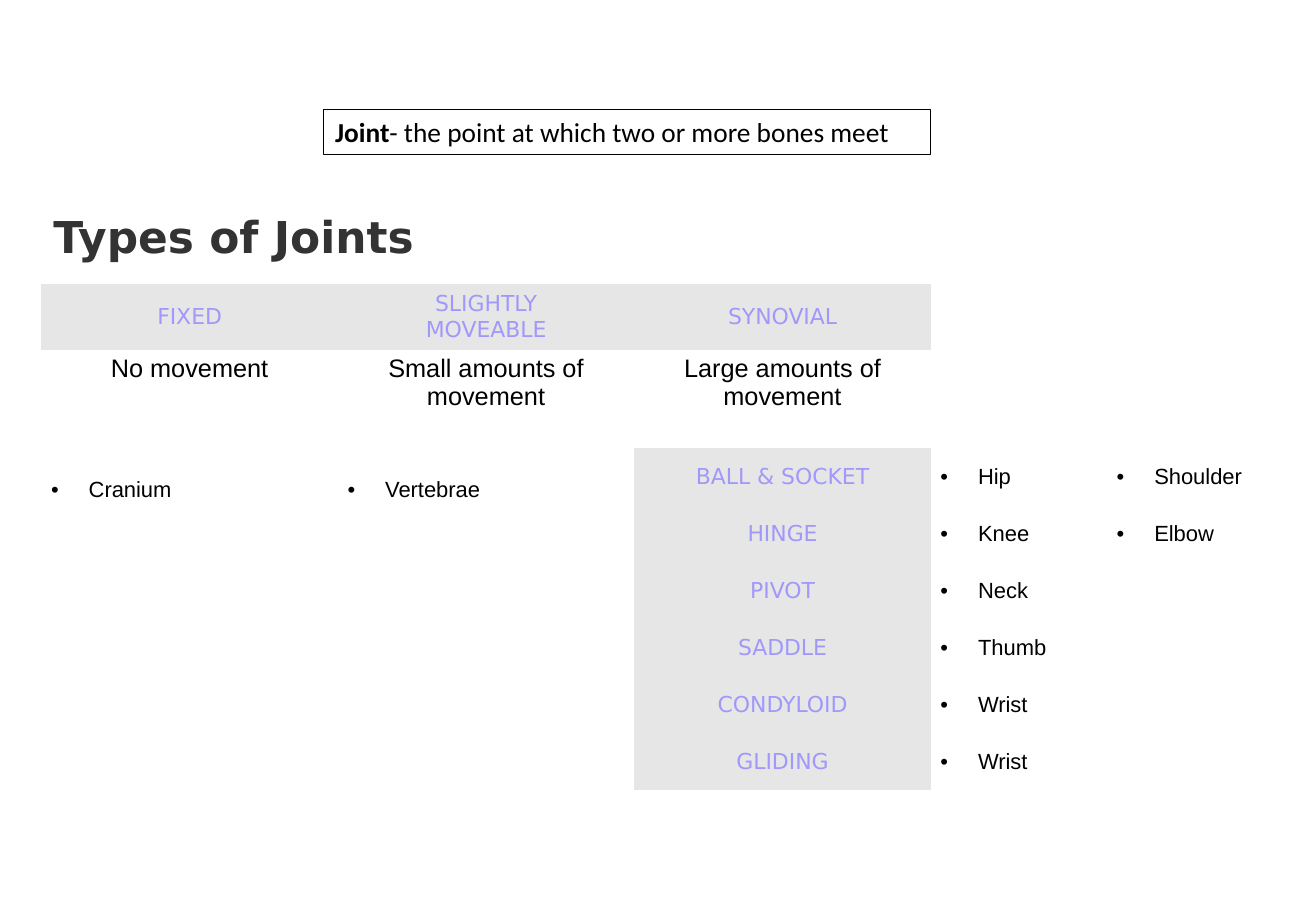
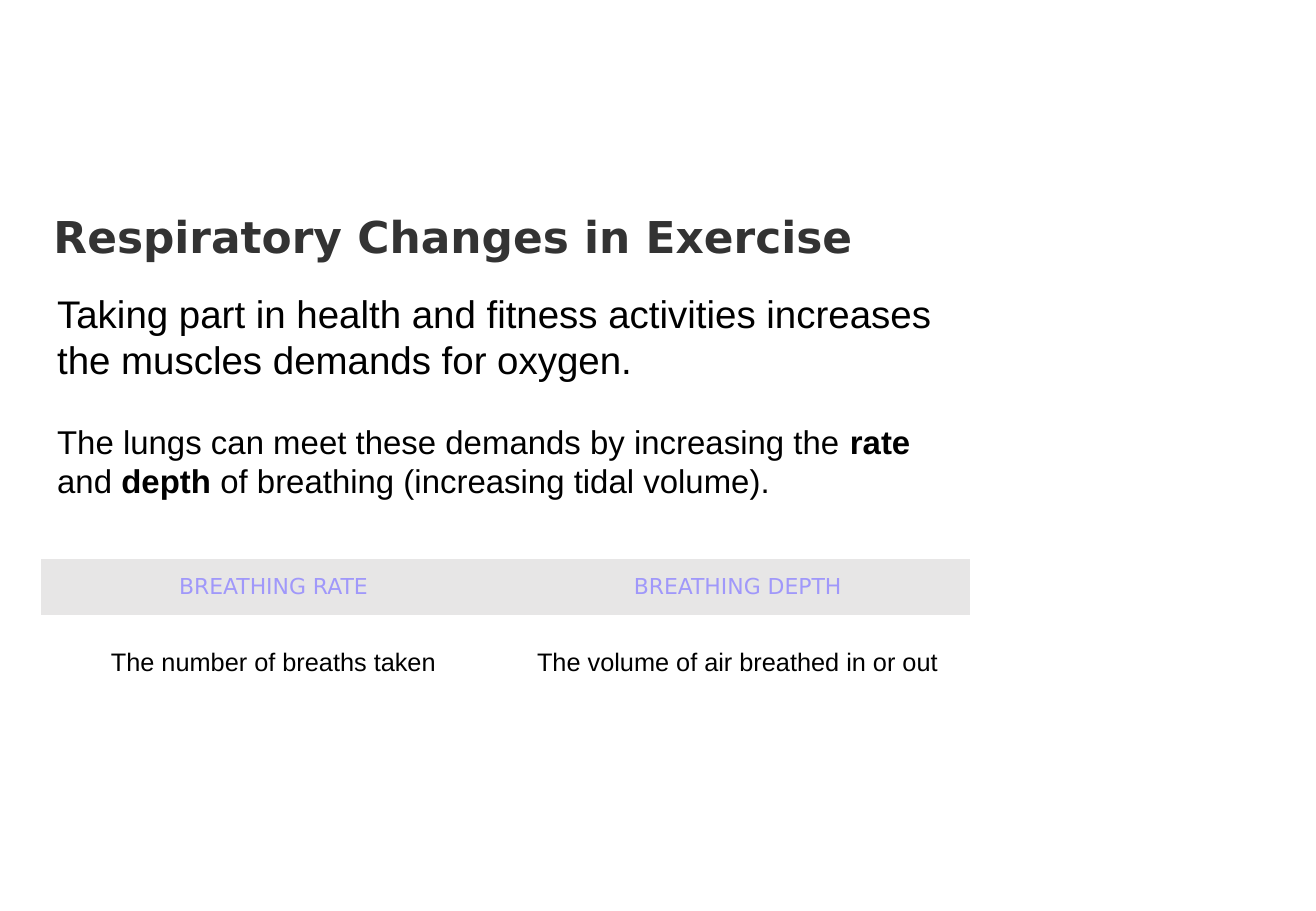
import pptx
import pptx.dml.color
import pptx.enum.text
import pptx.oxml
import pptx.oxml.ns
import pptx.util

Inches = pptx.util.Inches
Pt = pptx.util.Pt
ALIGN = pptx.enum.text.PP_ALIGN
ANCHOR = pptx.enum.text.MSO_ANCHOR

COLOURS = {"title": "333333", "text": "000000", "label": "A098FA", "band": "E7E6E6"}
LOOKS = {
    "title": {"name": "DejaVu Sans", "size": Pt(26), "bold": True},
    "label": {"name": "DejaVu Sans", "size": Pt(13)},
    "definition": {"name": "Calibri", "size": Pt(16.2)},
    "lead": {"name": "Arial", "size": Pt(22.8)},
    "detail": {"name": "Arial", "size": Pt(19.5)},
    "summary": {"name": "Arial", "size": Pt(15)},
    "example": {"name": "Arial", "size": Pt(13)},
}
NO_STYLE = "{2D5ABB26-0587-4C30-8999-92F81FD0307C}"
NAMESPACE = pptx.oxml.ns.nsdecls("a")
LEFT = 0.34


def write(paragraph, pieces, look, align=ALIGN.LEFT):
    paragraph.alignment = align
    for text, bold in pieces:
        run = paragraph.add_run()
        run.text = text
        for attribute, value in {"bold": bold, **LOOKS[look]}.items():
            setattr(run.font, attribute, value)
        colour = COLOURS.get(look, COLOURS["text"])
        run.font.color.rgb = pptx.dml.color.RGBColor.from_string(colour)


def fill_table(slide, top, widths, heights, entries, spans):
    table = slide.shapes.add_table(
        len(heights), len(widths), Inches(LEFT), Inches(top),
        Inches(sum(widths)), Inches(sum(heights))).table
    table.first_row = table.horz_banding = False
    table._tbl.tblPr.find(pptx.oxml.ns.qn("a:tableStyleId")).text = NO_STYLE
    for column, width in zip(table.columns, widths):
        column.width = Inches(width)
    for row, height in zip(table.rows, heights):
        row.height = Inches(height)
    for cell in table.iter_cells():
        cell.fill.background()
    for first, last in spans:
        table.cell(*first).merge(table.cell(*last))
    for row, column, text, look, margin_top in entries:
        cell = table.cell(row, column)
        settings = {
            "margin_left": Inches(0.08), "margin_right": Inches(0.08),
            "margin_top": Inches(margin_top), "margin_bottom": Inches(0.04),
            "vertical_anchor": ANCHOR.MIDDLE if look == "label" or column > 2 else ANCHOR.TOP,
        }
        for attribute, value in settings.items():
            setattr(cell, attribute, value)
        if look == "label":
            cell.fill.solid()
            cell.fill.fore_color.rgb = pptx.dml.color.RGBColor.from_string(COLOURS["band"])
        for index, line in enumerate(text.split("\n")):
            paragraph = cell.text_frame.add_paragraph() if index else cell.text_frame.paragraphs[0]
            if look == "example":
                properties = paragraph._p.get_or_add_pPr()
                properties.set("marL", str(Inches(0.31)))
                properties.set("indent", str(-Inches(0.31)))
                for bullet in ('buFont {} typeface="Arial"', 'buChar {} char="•"'):
                    properties.append(pptx.oxml.parse_xml(f"<a:{bullet.format(NAMESPACE)}/>"))
            write(paragraph, [(line, None)], look,
                  ALIGN.LEFT if look == "example" else ALIGN.CENTER)


presentation = pptx.Presentation()
presentation.slide_width = Inches(10.83)
presentation.slide_height = Inches(7.5)

slides = []
for heading, layout in [("Types of Joints", 5), ("Respiratory Changes in Exercise", 1)]:
    slide = presentation.slides.add_slide(presentation.slide_layouts[layout])
    title = slide.shapes.title
    title.left, title.top = Inches(LEFT), Inches(1.67)
    title.width, title.height = Inches(7.23), Inches(0.54)
    title.text_frame.vertical_anchor = ANCHOR.MIDDLE
    title.text_frame.auto_size = pptx.enum.text.MSO_AUTO_SIZE.NONE
    write(title.text_frame.paragraphs[0], [(heading, True)], "title")
    slides.append(slide)
joints, breathing = slides

joint_entries = []
categories = [
    ("FIXED", "No movement"),
    ("SLIGHTLY\nMOVEABLE", "Small amounts of movement"),
    ("SYNOVIAL", "Large amounts of movement"),
]
for column, (category, movement) in enumerate(categories):
    joint_entries += [(0, column, category, "label", 0.04),
                      (1, column, movement, "summary", 0.04)]
for column, example in enumerate(["Cranium", "Vertebrae"]):
    joint_entries.append((2, column, example, "example", 0.24))

joint_spans = [((0, 3), (0, 4)), ((1, 3), (1, 4)), ((2, 0), (7, 0)), ((2, 1), (7, 1))]
synovial = [
    ("BALL & SOCKET", ["Hip", "Shoulder"]),
    ("HINGE", ["Knee", "Elbow"]),
    ("PIVOT", ["Neck"]),
    ("SADDLE", ["Thumb"]),
    ("CONDYLOID", ["Wrist"]),
    ("GLIDING", ["Wrist"]),
]
for row, (joint, examples) in enumerate(synovial, start=2):
    joint_entries.append((row, 2, joint, "label", 0.04))
    for column, example in enumerate(examples, start=3):
        joint_entries.append((row, column, example, "example", 0.04))
    if len(examples) == 1:
        joint_spans.append(((row, 3), (row, 4)))

fill_table(joints, 2.34, [2.44] * 3 + [1.45] * 2,
           [0.54, 0.81] + [0.47] * len(synovial), joint_entries, joint_spans)

definition = joints.shapes.add_textbox(Inches(2.66), Inches(0.9), Inches(5), Inches(0.37))
definition.text_frame.word_wrap = True
definition.line.color.rgb = pptx.dml.color.RGBColor.from_string(COLOURS["text"])
definition.line.width = Pt(0.75)
write(definition.text_frame.paragraphs[0],
      [("Joint", True), ("- the point at which two or more bones meet", False)], "definition")

explanation = breathing.placeholders[1]
explanation.left, explanation.top = Inches(0.39), Inches(2.35)
explanation.width, explanation.height = Inches(7.59), Inches(2.2)
frame_settings = {
    "margin_left": Inches(0.08), "margin_right": Inches(0.08),
    "margin_top": Inches(0.04), "margin_bottom": Inches(0.04),
    "auto_size": pptx.enum.text.MSO_AUTO_SIZE.NONE, "vertical_anchor": ANCHOR.TOP,
}
for attribute, value in frame_settings.items():
    setattr(explanation.text_frame, attribute, value)
statements = [
    ("lead", 0, [("Taking part in health and fitness activities increases "
                  "the muscles demands for oxygen.", False)]),
    ("detail", 23, [("The lungs can meet these demands by increasing the ", False),
                    ("rate", True), (" and ", False), ("depth", True),
                    (" of breathing (increasing tidal volume).", False)]),
]
for index, (look, gap, pieces) in enumerate(statements):
    frame = explanation.text_frame
    paragraph = frame.add_paragraph() if index else frame.paragraphs[0]
    properties = paragraph._p.get_or_add_pPr()
    properties.set("marL", "0")
    properties.set("indent", "0")
    properties.append(pptx.oxml.parse_xml(f"<a:buNone {NAMESPACE}/>"))
    paragraph.line_spacing = 1.0
    paragraph.space_before = Pt(gap)
    write(paragraph, pieces, look)

breathing_entries = []
measures = [
    ("BREATHING RATE", "The number of breaths taken"),
    ("BREATHING DEPTH", "The volume of air breathed in or out"),
]
for column, (measure, meaning) in enumerate(measures):
    breathing_entries += [(0, column, measure, "label", 0.04),
                          (1, column, meaning, "summary", 0.28)]
fill_table(breathing, 4.6, [3.82] * 2, [0.46, 1.04], breathing_entries, [])

presentation.save("out.pptx")
